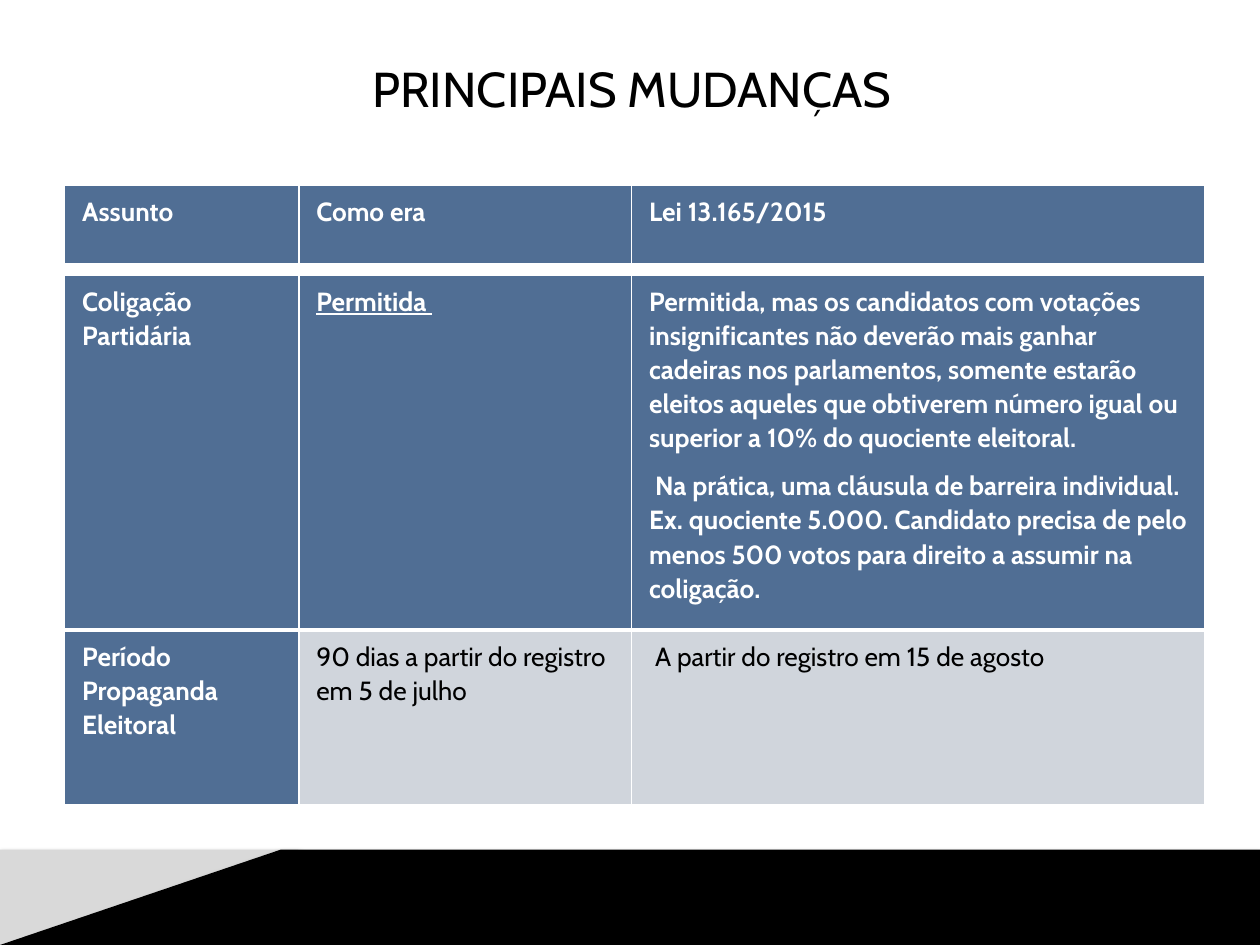
"""Builds the slide that compares the electoral rules before and after Lei 13.165/2015."""
import pptx
import pptx.dml.color
import pptx.enum.text
import pptx.oxml
import pptx.oxml.ns
import pptx.util

Pt = pptx.util.Pt
RGBColor = pptx.dml.color.RGBColor

WHITE = RGBColor(0xFF, 0xFF, 0xFF)
BLACK = RGBColor(0x00, 0x00, 0x00)
BLUE = RGBColor(0x50, 0x6E, 0x94)
PALE_BLUE = RGBColor(0xD0, 0xD5, 0xDC)
GREY = RGBColor(0xD9, 0xD9, 0xD9)

FONT = "Cabin"
SLIDE_WIDTH, SLIDE_HEIGHT = 720, 540
BAND_TOP = 485.5
TABLE_LEFT = 37
COLUMN_WIDTHS = (133.8, 190.2, 327.4)

HEADER = [["Assunto", "Como era", "Lei 13.165/2015"]]
CHANGES = [
    [
        "Coligação Partidária",
        "Permitida ",
        "Permitida, mas os candidatos com votações insignificantes não deverão mais ganhar "
        "cadeiras nos parlamentos, somente estarão eleitos aqueles que obtiverem número igual "
        "ou superior a 10% do quociente eleitoral.\n"
        " Na prática, uma cláusula de barreira individual. Ex. quociente 5.000. Candidato "
        "precisa de pelo menos 500 votos para direito a assumir na coligação.",
    ],
    [
        "Período Propaganda Eleitoral",
        "90 dias a partir do registro em 5 de julho",
        " A partir do registro em 15 de agosto",
    ],
]


def set_font(paragraph, size, color, bold=False):
    """Format every run of a paragraph."""
    for run in paragraph.runs:
        run.font.name = FONT
        run.font.size = Pt(size)
        run.font.bold = bold
        run.font.color.rgb = color


def add_band(slide, points, color):
    """Draw a filled polygon with a soft shadow."""
    builder = slide.shapes.build_freeform(Pt(points[0][0]), Pt(points[0][1]))
    builder.add_line_segments([(Pt(x), Pt(y)) for x, y in points[1:]], close=True)
    shape = builder.convert_to_shape()
    shape.fill.solid()
    shape.fill.fore_color.rgb = color
    shape.line.fill.background()
    shape.shadow.inherit = False
    effects = shape._element.spPr.find(pptx.oxml.ns.qn("a:effectLst"))
    effects.append(pptx.oxml.parse_xml(
        f'<a:outerShdw {pptx.oxml.ns.nsdecls("a")} blurRad="{Pt(3.1)}" dist="{Pt(1.6)}" '
        'dir="5400000" rotWithShape="0"><a:srgbClr val="000000"><a:alpha val="38000"/>'
        '</a:srgbClr></a:outerShdw>'))


def add_title(slide, text):
    """Add the centred slide title."""
    shape = slide.shapes.add_textbox(Pt(65), Pt(29), Pt(592), Pt(43))
    frame = shape.text_frame
    frame.word_wrap = True
    frame.vertical_anchor = pptx.enum.text.MSO_ANCHOR.MIDDLE
    frame.text = text
    paragraph = frame.paragraphs[0]
    paragraph.alignment = pptx.enum.text.PP_ALIGN.CENTER
    set_font(paragraph, 28, BLACK)


def set_borders(cell, bottom_width):
    """Give a cell white borders, with its own width at the bottom."""
    properties = cell._tc.get_or_add_tcPr()
    widths = {"lnL": 1, "lnR": 1, "lnT": 1, "lnB": bottom_width}
    for index, (tag, width) in enumerate(widths.items()):
        properties.insert(index, pptx.oxml.parse_xml(
            f'<a:{tag} {pptx.oxml.ns.nsdecls("a")} w="{Pt(width)}"><a:solidFill>'
            f'<a:srgbClr val="{WHITE}"/></a:solidFill></a:{tag}>'))


def fill_cell(cell, text, highlighted, bottom_width):
    """Write a cell in bold white on blue, or in black on pale blue."""
    cell.margin_left = cell.margin_right = Pt(10)
    cell.margin_top = cell.margin_bottom = Pt(5)
    cell.fill.solid()
    cell.fill.fore_color.rgb = BLUE if highlighted else PALE_BLUE
    set_borders(cell, bottom_width)
    cell.text_frame.text = text
    for paragraph in cell.text_frame.paragraphs:
        paragraph.line_spacing = 1.07
        paragraph.space_after = Pt(8)
        set_font(paragraph, 15, WHITE if highlighted else BLACK, highlighted)


def add_rule_table(slide, top, row_heights, rows):
    """Add a table whose first row and first column are highlighted."""
    frame = slide.shapes.add_table(
        len(rows), len(COLUMN_WIDTHS), Pt(TABLE_LEFT), Pt(top),
        Pt(sum(COLUMN_WIDTHS)), Pt(sum(row_heights)))
    table = frame.table
    for column, width in zip(table.columns, COLUMN_WIDTHS):
        column.width = Pt(width)
    for row_index, (height, texts) in enumerate(zip(row_heights, rows)):
        table.rows[row_index].height = Pt(height)
        for column_index, text in enumerate(texts):
            highlighted = row_index == 0 or column_index == 0
            fill_cell(table.cell(row_index, column_index), text, highlighted,
                      3 if row_index == 0 else 1)
    return table


def main():
    """Build and save the slide."""
    presentation = pptx.Presentation()
    presentation.slide_width = Pt(SLIDE_WIDTH)
    presentation.slide_height = Pt(SLIDE_HEIGHT)
    slide = presentation.slides.add_slide(presentation.slide_layouts[6])
    slide.background.fill.solid()
    slide.background.fill.fore_color.rgb = WHITE

    add_band(slide, [(0, SLIDE_HEIGHT), (0, BAND_TOP), (170, BAND_TOP),
                     (297.5, SLIDE_HEIGHT)], GREY)
    add_band(slide, [(0, SLIDE_HEIGHT), (160.5, BAND_TOP), (SLIDE_WIDTH, BAND_TOP),
                     (SLIDE_WIDTH, SLIDE_HEIGHT)], BLACK)
    add_title(slide, "PRINCIPAIS MUDANÇAS")
    changes = add_rule_table(slide, 157, (203, 100), CHANGES)
    changes.cell(0, 1).text_frame.paragraphs[0].runs[0].font.underline = True
    add_rule_table(slide, 105.8, (46,), HEADER)
    presentation.save("out.pptx")


if __name__ == "__main__":
    main()
